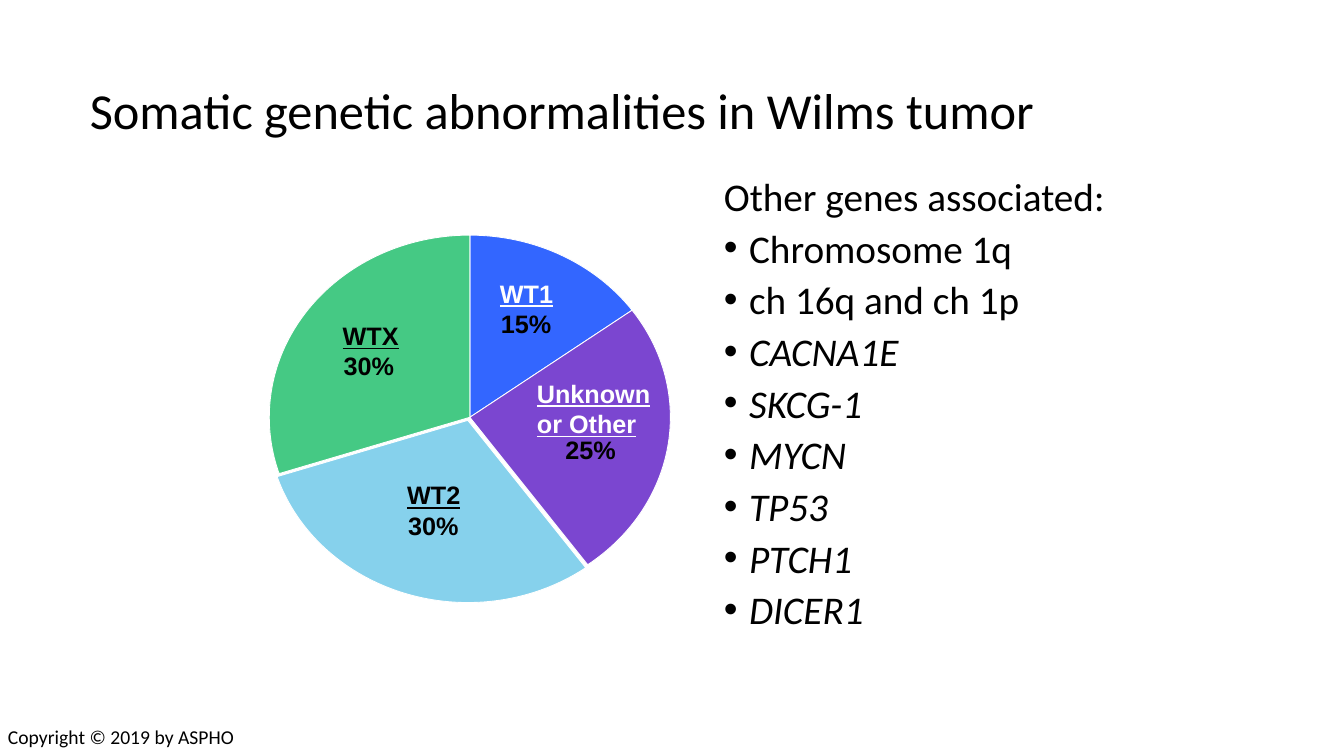
import math

from lxml import etree
from pptx import Presentation
from pptx import util as u
from pptx.dml.color import RGBColor
from pptx.enum import text
from pptx.oxml.ns import qn

COLOURS = {
    "ink": "000000",
    "paper": "FFFFFF",
    "WT1": "3366FF",
    "Unknown or Other": "7B46D0",
    "WT2": "86D1EC",
    "WTX": "45C984",
}

deck = Presentation()
deck.slide_width, deck.slide_height = u.Inches(13.33), u.Inches(7.5)
page = deck.slides.add_slide(deck.slide_layouts[1])


def place(left, top, width, height):
    """Turn percentages of the slide's size into lengths."""
    across, down = deck.slide_width / 100, deck.slide_height / 100
    return [u.Emu(round(share * unit)) for share, unit in
            zip((left, top, width, height), (across, down, across, down))]


def write(para, words, size, face, colour="ink", **style):
    """Add one run; style holds font switches such as bold or italic."""
    span = para.add_run()
    span.text = words
    span.font.size, span.font.name = u.Pt(size), face
    span.font.color.rgb = RGBColor.from_string(COLOURS[colour])
    for switch, value in style.items():
        setattr(span.font, switch, value)


# Title
title = page.shapes.title
title.left, title.top, title.width, title.height = place(5.93, 5.33, 92.2, 19.33)
title.text_frame.auto_size = text.MSO_AUTO_SIZE.NONE
title.text_frame.vertical_anchor = text.MSO_ANCHOR.MIDDLE
para = title.text_frame.paragraphs[0]
para.alignment, para.line_spacing = text.PP_ALIGN.LEFT, 0.9
write(para, "Somatic genetic abnormalities in Wilms tumor", 36, "Calibri")

# Gene list: a heading line, then bullets, with gene symbols in italics
body = page.placeholders[1]
body.left, body.top, body.width, body.height = place(53.11, 23.33, 33.16, 66)
body.text_frame.auto_size = text.MSO_AUTO_SIZE.NONE
heading = "Other genes associated:"
regions = ["Chromosome 1q", "ch 16q and ch 1p"]
genes = ["CACNA1E", "SKCG-1", "MYCN", "TP53", "PTCH1", "DICER1"]
for words in [heading, *regions, *genes]:
    first = words == heading
    para = body.text_frame.paragraphs[0] if first else body.text_frame.add_paragraph()
    para.line_spacing = 0.8
    para.space_before = u.Pt(0 if first else 10)
    props = para._p.get_or_add_pPr()
    indent = 0 if first else u.Inches(0.25)
    props.set("marL", str(indent))
    props.set("indent", str(-indent))
    if first:
        etree.SubElement(props, qn("a:buNone"))
    else:
        etree.SubElement(props, qn("a:buFont"), typeface="Arial")
        etree.SubElement(props, qn("a:buChar"), char="•")
    write(para, words, 28, "Calibri", italic=words in genes)

# Elliptical pie, clockwise from the top: name, percent, slice shift,
# name colour, name box, top left of the percent box
slices = [
    ("WT1", 15, (0, 0), "paper", (37.2, 36.8, 3.98, 4), (36.53, 40.13)),
    ("Unknown or Other", 25, (0, 0), "paper", (39.95, 50, 8.78, 8.13), (41.33, 56.8)),
    ("WT2", 30, (-0.15, 0.4), "ink", (30.3, 63.47, 3.98, 4), (29.63, 66.8)),
    ("WTX", 30, (0, 0), "ink", (25.5, 42.4, 4.2, 4), (24.83, 45.73)),
]
done = 0
for name, percent, shift, *_ in slices:
    x, y, radius_x, radius_y = place(34.96 + shift[0], 55.2 + shift[1], 14.92, 24.1)
    # One Bezier curve per quadrant touched keeps every handle inside the slice's box
    end = done + percent
    stops = [done, *(q for q in (25, 50, 75) if done < q < end), end]
    points = []
    for start, stop in zip(stops, stops[1:]):
        a, b = (math.tau * share / 100 for share in (start, stop))
        reach = 4 / 3 * math.tan((b - a) / 4)
        for angle, pull in ((a, 0), (a, reach), (b, -reach), (b, 0)):
            points.append((
                x + radius_x * (math.sin(angle) + pull * math.cos(angle)),
                y - radius_y * (math.cos(angle) - pull * math.sin(angle)),
            ))
        if start > done:
            del points[-4]  # the curve before ends at this point
    outline = page.shapes.build_freeform(*points[0])
    outline.add_line_segments([*points[1:], (x, y), points[0]], close=True)
    wedge = outline.convert_to_shape()
    lines = list(wedge._element.iter(qn("a:lnTo")))
    for first in range(0, len(points) - 1, 3):
        curve = etree.Element(qn("a:cubicBezTo"))
        lines[first].addprevious(curve)
        for line in lines[first:first + 3]:
            curve.append(line[0])
            line.getparent().remove(line)
    wedge.shadow.inherit = False
    wedge.fill.solid()
    wedge.fill.fore_color.rgb = RGBColor.from_string(COLOURS[name])
    wedge.line.color.rgb = RGBColor.from_string(COLOURS["paper"])
    wedge.line.width = u.Pt(0.63)
    done = end

for name, percent, _, colour, name_area, corner in slices:
    box = page.shapes.add_textbox(*place(*name_area))
    frame = box.text_frame
    frame.margin_left = frame.margin_right = frame.margin_top = frame.margin_bottom = 0
    frame.word_wrap = " " in name
    frame.auto_size = text.MSO_AUTO_SIZE.SHAPE_TO_FIT_TEXT
    write(frame.paragraphs[0], name, 18, "Arial", colour, bold=True, underline=True)

    box = page.shapes.add_textbox(*place(*corner, 5.25, 5.33))
    box.text_frame.word_wrap = False
    box.text_frame.auto_size = text.MSO_AUTO_SIZE.SHAPE_TO_FIT_TEXT
    write(box.text_frame.paragraphs[0], f"{percent}%", 18, "Arial", bold=True)

# Copyright line
box = page.shapes.add_textbox(*place(-0.15, 95.27, 25.5, 4.53))
box.text_frame.word_wrap = True
box.text_frame.auto_size = text.MSO_AUTO_SIZE.SHAPE_TO_FIT_TEXT
write(box.text_frame.paragraphs[0], "Copyright © 2019 by ASPHO", 14, "Calibri")

deck.save("out.pptx")
